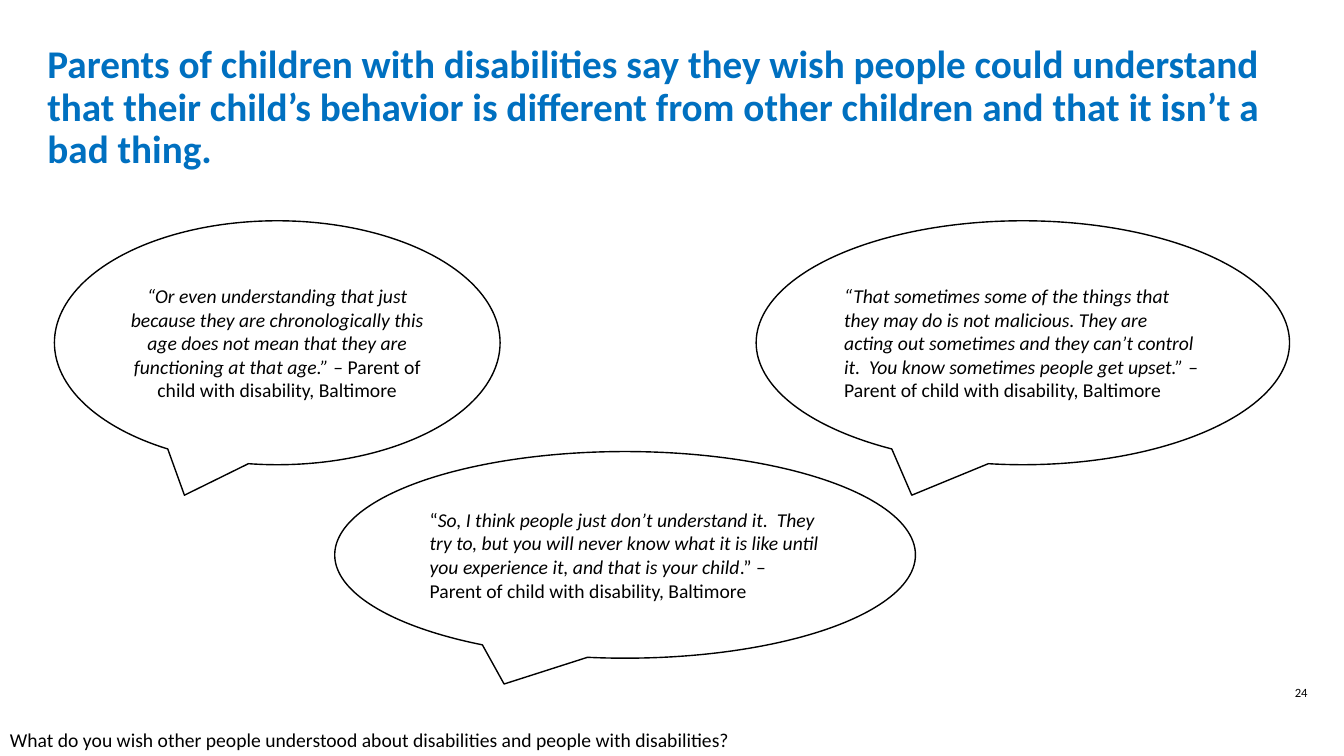
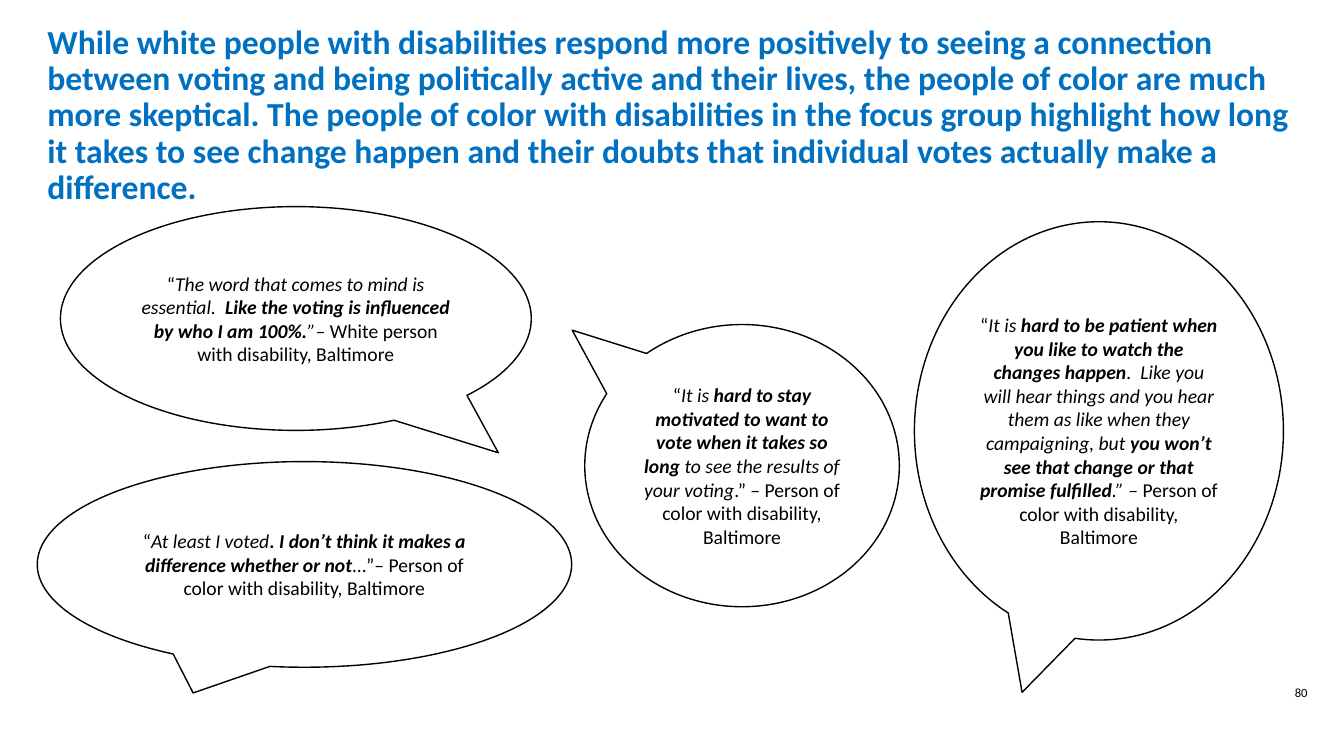
from pptx import Presentation
from pptx.dml.color import RGBColor
from pptx.enum.shapes import MSO_SHAPE
from pptx.enum.text import MSO_ANCHOR, MSO_AUTO_SIZE, PP_ALIGN
from pptx.util import Inches, Pt

BLUE = RGBColor(0x00, 0x70, 0xC0)
BLACK = RGBColor(0x00, 0x00, 0x00)


class Deck:
    """Holds the shared style and the current slide."""

    def __init__(self):
        self.prs = Presentation()
        self.prs.slide_width = Inches(13.33)
        self.prs.slide_height = Inches(7.5)
        self.slide = None

    def style(self, para, size, color=BLACK, align=PP_ALIGN.LEFT):
        para.alignment = align
        font = para.font
        font.name = "Calibri"
        font.size = Pt(size)
        font.color.rgb = color
        return font

    def place(self, shape, box):
        shape.left, shape.top, shape.width, shape.height = map(Inches, box)

    def page(self, title, size, top, height, number):
        self.slide = self.prs.slides.add_slide(self.prs.slide_layouts[5])
        head = self.slide.shapes.title
        self.place(head, (0.37, top, 12.6, height))
        frame = head.text_frame
        frame.text = title
        frame.word_wrap = True
        frame.auto_size = MSO_AUTO_SIZE.NONE
        frame.vertical_anchor = MSO_ANCHOR.MIDDLE
        para = frame.paragraphs[0]
        para.line_spacing = 0.9
        self.style(para, size, BLUE).bold = True
        self.text(str(number), (12.53, 6.75, 0.75, 0.33), 9, PP_ALIGN.CENTER)

    def text(self, words, box, size, align=PP_ALIGN.LEFT):
        frame = self.slide.shapes.add_textbox(*map(Inches, box)).text_frame
        frame.text = words
        frame.word_wrap = True
        self.style(frame.paragraphs[0], size, align=align)

    def bubble(self, box, quote, align=PP_ALIGN.CENTER, tip=None):
        shape = self.slide.shapes.add_shape(
            MSO_SHAPE.OVAL_CALLOUT, *map(Inches, box))
        shape.shadow.inherit = False
        shape.fill.background()
        shape.line.color.rgb = BLACK
        shape.line.width = Pt(1)
        if tip:
            shape.adjustments[0], shape.adjustments[1] = tip
        frame = shape.text_frame
        frame.word_wrap = True
        frame.vertical_anchor = MSO_ANCHOR.MIDDLE
        para = frame.paragraphs[0]
        self.style(para, 14, align=align)
        for words, marks in quote:
            run = para.add_run()
            run.text = words
            run.font.italic = "i" in marks
            run.font.bold = "b" in marks


def main():
    deck = Deck()
    parent = "– Parent of child with disability, Baltimore"
    person = "– Person of color with disability, Baltimore"

    deck.page(
        "Parents of children with disabilities say they wish people could "
        "understand that their child’s behavior is different from other "
        "children and that it isn’t a bad thing.", 28, 0.35, 1.45, 24)
    deck.text("What do you wish other people understood about disabilities "
              "and people with disabilities?", (0, 7.17, 7.51, 0.33), 14)
    deck.bubble((7.5, 2.19, 5.29, 2.42), [
        ("“That sometimes some of the things that they may do is not "
         "malicious. They are acting out sometimes and they can’t control "
         "it.  You know sometimes people get upset.” ", "i"),
        (parent, "")], PP_ALIGN.LEFT)
    deck.bubble((3.32, 4.48, 5.76, 2.05), [
        ("“", ""),
        ("So, I think people just don’t understand it.  They try to, but you "
         "will never know what it is like until you experience it, and that "
         "is your child", "i"),
        (".” " + parent, "")], PP_ALIGN.LEFT)
    deck.bubble((0.54, 2.19, 4.42, 2.42), [
        ("“Or even understanding that just because they are chronologically "
         "this age does not mean that they are functioning at that age.” ",
         "i"),
        (parent, "")])

    deck.page(
        "While white people with disabilities respond more positively to "
        "seeing a connection between voting and being politically active and "
        "their lives, the people of color are much more skeptical. The people "
        "of color with disabilities in the focus group highlight how long it "
        "takes to see change happen and their doubts that individual votes "
        "actually make a difference.", 24, 0.13, 2.04, 80)
    deck.bubble((9.07, 2.2, 3.66, 4.15), [
        ("“", ""),
        ("It is ", "i"),
        ("hard to be patient when you like to watch the changes happen", "bi"),
        (".  Like you will hear things and you hear them as like when they "
         "campaigning, but ", "i"),
        ("you won’t see that change or that promise fulfilled", "bi"),
        (".” ", "i"),
        (person, "")])
    deck.bubble((5.8, 3.22, 3.12, 2.8), [
        ("“", ""),
        ("It is ", "i"),
        ("hard to stay motivated to want to vote when it takes so long", "bi"),
        (" to see the results of your voting", "i"),
        (".” " + person, "")], tip=(-0.54, -0.48))
    deck.bubble((0.37, 4.58, 5.3, 2.04), [
        ("“", ""),
        ("At least I voted", "i"),
        (". I don’t think it makes a difference whether or not", "bi"),
        ("…”" + person, "")])
    deck.bubble((0.6, 2.05, 4.67, 2.22), [
        ("“", ""),
        ("The word that comes to mind is essential.  ", "i"),
        ("Like the voting is influenced by who I am 100%.", "bi"),
        ("”– ", "i"),
        ("White person with disability, Baltimore", "")], tip=(0.43, 0.6))
    deck.prs.save("out.pptx")


if __name__ == "__main__":
    main()
